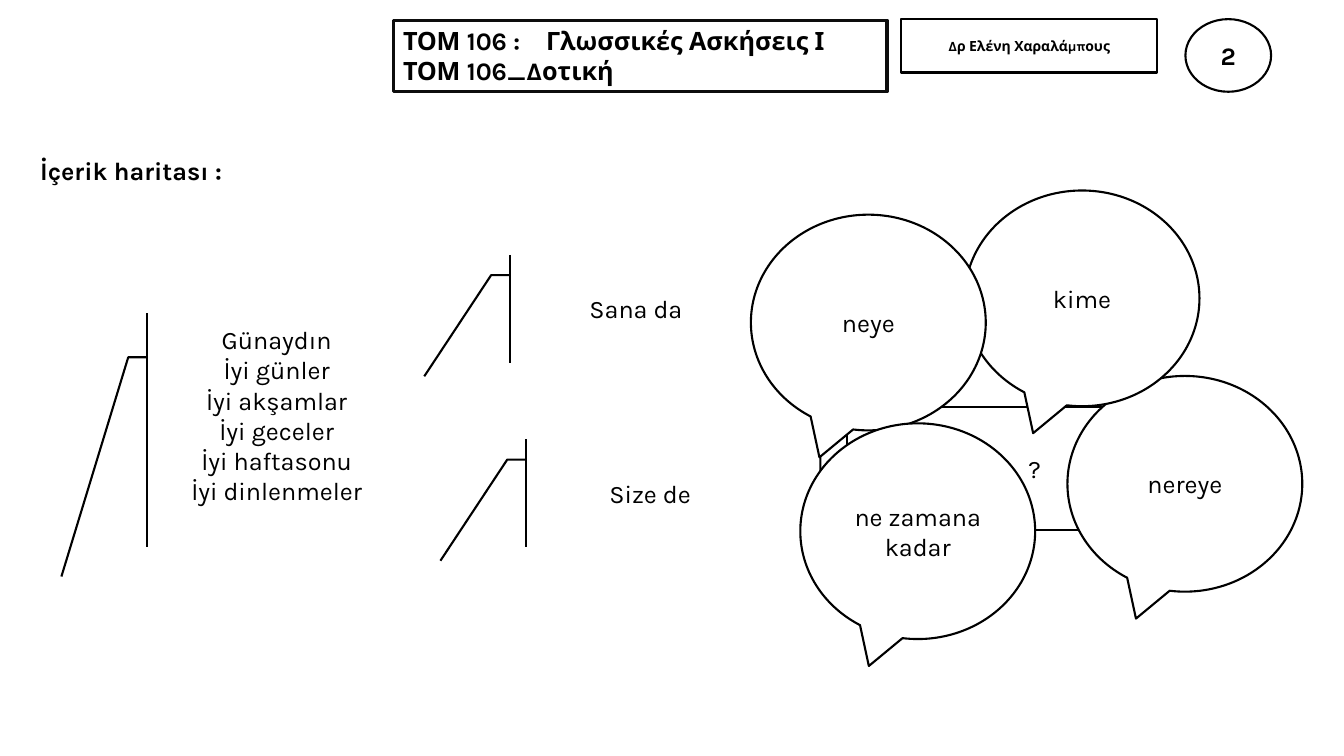
from dataclasses import dataclass
from typing import Optional

from lxml.etree import SubElement
from pptx import Presentation
from pptx.dml.color import RGBColor
from pptx.enum.shapes import MSO_SHAPE
from pptx.enum.text import MSO_ANCHOR, MSO_AUTO_SIZE, PP_ALIGN
from pptx.oxml.ns import qn
from pptx.util import Inches, Pt

# Grid: square cells, a tenth of an inch on each side
CELL = Inches(0.1)
SLIDE_COLUMNS, SLIDE_ROWS = 133.33, 75
FONT = "Karla"
BLACK, WHITE, TITLE_LINE = "000000", "FFFFFF", "0D0D0D"
BUBBLE_COLUMNS, BUBBLE_ROWS = 23.3, 21.4

REPLY = MSO_SHAPE.LINE_CALLOUT_2_ACCENT_BAR
QUESTION = MSO_SHAPE.LINE_CALLOUT_3_BORDER_AND_ACCENT_BAR
BUBBLE = MSO_SHAPE.OVAL_CALLOUT


@dataclass
class Item:
    lines: list[str]
    column: float
    row: float
    columns: float
    rows: float
    kind: Optional[MSO_SHAPE] = None  # None is a plain text box
    fill: Optional[str] = WHITE
    line: str = BLACK
    line_width: float = 1.5
    size: int = 18
    bold: bool = False
    centred: bool = True
    inset_right: float = 1
    inset_bottom: float = 0.5
    tab: Optional[float] = None


def cells(count: float) -> int:
    return round(count * CELL)


def colour(value: str) -> RGBColor:
    return RGBColor.from_string(value)


def add_tab_stop(para, position: float) -> None:
    """Set one left tab stop on a paragraph that has no properties yet."""
    tabs = SubElement(para._p.get_or_add_pPr(), qn("a:tabLst"))
    SubElement(tabs, qn("a:tab"), pos=str(cells(position)), algn="l")


def write_text(box, item: Item) -> None:
    frame = box.text_frame
    frame.word_wrap = True
    frame.margin_right = cells(item.inset_right)
    frame.margin_bottom = cells(item.inset_bottom)
    if item.centred:
        frame.vertical_anchor = MSO_ANCHOR.MIDDLE
    else:
        frame.vertical_anchor = MSO_ANCHOR.TOP
        frame.auto_size = MSO_AUTO_SIZE.SHAPE_TO_FIT_TEXT
    for index, line in enumerate(item.lines):
        para = frame.add_paragraph() if index else frame.paragraphs[0]
        para.text = line
        if item.tab is not None:
            add_tab_stop(para, item.tab)
        para.alignment = PP_ALIGN.CENTER if item.centred else PP_ALIGN.LEFT
        para.font.name = FONT
        para.font.size = Pt(item.size)
        para.font.bold = item.bold
        para.font.color.rgb = colour(BLACK)


def draw(page, item: Item) -> None:
    place = [cells(n) for n in (item.column, item.row, item.columns, item.rows)]
    if item.kind is None:
        box = page.shapes.add_textbox(*place)
    else:
        box = page.shapes.add_shape(item.kind, *place)
        box.shadow.inherit = False
        if item.fill is None:
            box.fill.background()
        else:
            box.fill.solid()
            box.fill.fore_color.rgb = colour(item.fill)
        box.line.color.rgb = colour(item.line)
        box.line.width = Pt(item.line_width)
    write_text(box, item)


def bubble(text: str, column: float, row: float) -> Item:
    return Item([text], column, row, BUBBLE_COLUMNS, BUBBLE_ROWS, BUBBLE)


GREETINGS = ["Günaydın", "İyi günler", "İyi akşamlar", "İyi geceler",
             "İyi haftasonu", "İyi dinlenmeler"]

# Back to front
ITEMS = [
    # Heading, greetings and replies
    Item(["İçerik haritası :"], 3, 14.9, 32.6, 4, bold=True, centred=False),
    Item(GREETINGS, 16.4, 31.1, 22.1, 23.2, REPLY, inset_bottom=3.5),
    Item(["Sana da"], 52.4, 25.3, 22.1, 10.7, REPLY, inset_right=1.7),
    Item(["Size de"], 54, 43.6, 22.1, 10.7, REPLY, inset_right=2.1),
    # Question words around the question mark
    Item(["?"], 86.7, 40.4, 31.9, 12.2, QUESTION),
    bubble("nereye", 105.9, 37.3),
    bubble("kime", 95.7, 18.9),
    bubble("neye", 74.5, 21.3),
    bubble("ne zamana kadar", 79.4, 42),
    # Header: course, lecturer and page number
    Item(["ΤΟΜ 106 :\tΓλωσσικές Ασκήσεις Ι", "ΤΟΜ 106_Δοτική"],
         39, 2, 49, 7.1, MSO_SHAPE.RECTANGLE, fill=None, line=TITLE_LINE,
         line_width=2.25, bold=True, centred=False, tab=14.2),
    Item(["Δρ Ελένη Χαραλάμπους"], 89.4, 1.9, 25.4, 5.3,
         MSO_SHAPE.RECTANGLE, size=10, bold=True),
    Item(["2"], 117.6, 1.9, 8.5, 7.2, MSO_SHAPE.OVAL, bold=True),
]


def main() -> None:
    deck = Presentation()
    deck.slide_width = cells(SLIDE_COLUMNS)
    deck.slide_height = cells(SLIDE_ROWS)
    page = deck.slides.add_slide(deck.slide_layouts[6])
    page.background.fill.solid()
    page.background.fill.fore_color.rgb = colour(WHITE)
    for item in ITEMS:
        draw(page, item)
    deck.save("out.pptx")


if __name__ == "__main__":
    main()
